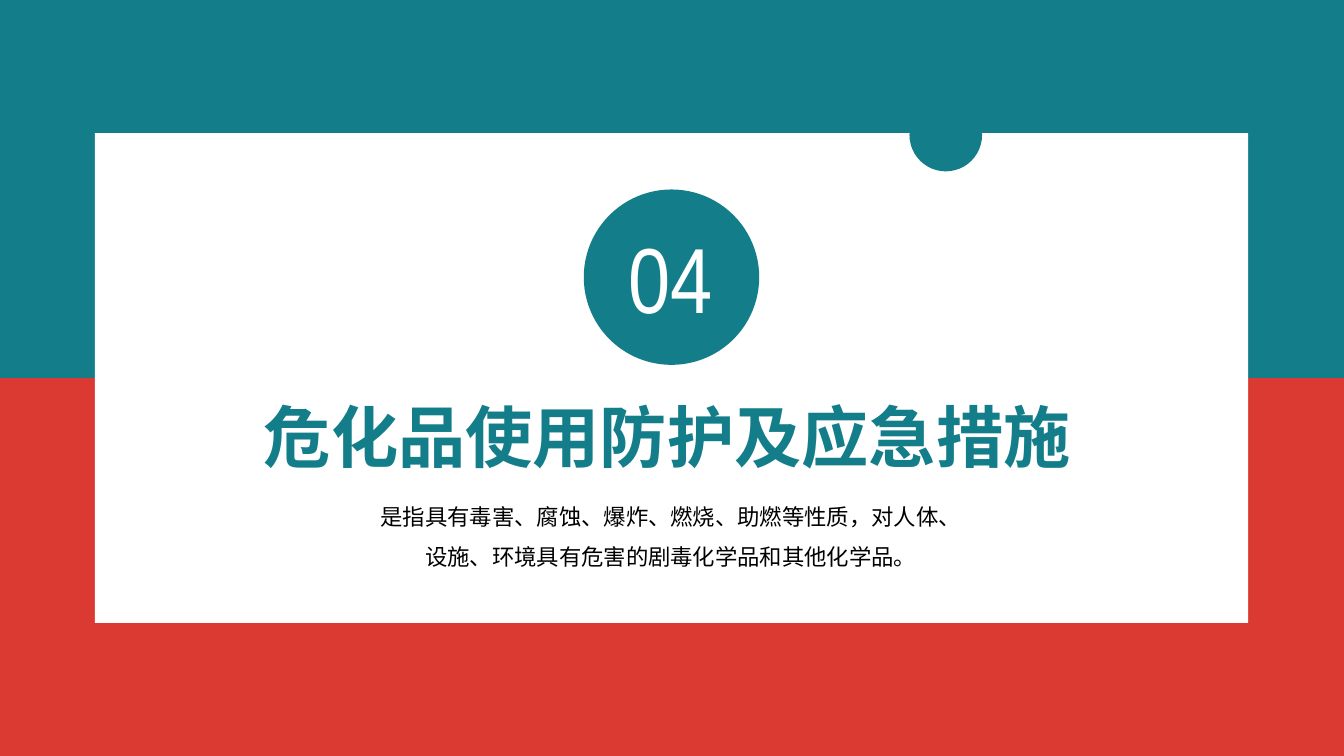
from dataclasses import dataclass

from pptx import Presentation
from pptx.dml.color import RGBColor
from pptx.enum.shapes import MSO_SHAPE
from pptx.enum.text import PP_ALIGN
from pptx.slide import Slide
from pptx.util import Inches, Pt

TEAL = RGBColor(0x13, 0x7E, 0x89)
RED = RGBColor(0xDB, 0x3A, 0x33)
WHITE = RGBColor(0xFF, 0xFF, 0xFF)
BLACK = RGBColor(0x00, 0x00, 0x00)
RECTANGLE = MSO_SHAPE.RECTANGLE
OVAL = MSO_SHAPE.OVAL
LEFT = PP_ALIGN.LEFT
CENTER = PP_ALIGN.CENTER

SLIDE_WIDTH = 13.33
SLIDE_HEIGHT = 7.5
HALF_HEIGHT = SLIDE_HEIGHT / 2


@dataclass
class Panel:
    kind: MSO_SHAPE
    left: float
    top: float
    width: float
    height: float
    color: RGBColor


@dataclass
class Label:
    text: str
    left: float
    top: float
    width: float
    height: float
    size: int
    color: RGBColor
    font: str = "Arial"
    bold: bool = False
    alignment: PP_ALIGN = CENTER
    line_spacing: float = 1.0


PANELS = [
    Panel(RECTANGLE, 0, HALF_HEIGHT, SLIDE_WIDTH, HALF_HEIGHT, RED),
    Panel(RECTANGLE, 0, 0, SLIDE_WIDTH, HALF_HEIGHT, TEAL),
    Panel(RECTANGLE, 0.94, 1.32, 11.44, 4.86, WHITE),
    Panel(OVAL, 9.02, 0.98, 0.72, 0.72, TEAL),
    Panel(OVAL, 5.79, 1.88, 1.74, 1.74, TEAL),
]

LABELS = [
    Label("04", 6.01, 2.14, 1.28, 1.21, 66, WHITE, font="Arial Narrow"),
    Label("危化品使用防护及应急措施", 2.52, 3.87, 8.26, 0.91, 48, TEAL,
          bold=True, alignment=LEFT),
    Label("是指具有毒害、腐蚀、爆炸、燃烧、助燃等性质，对人体、设施、环境具有危害的剧毒化学品和其他化学品。",
          3.61, 4.81, 6.09, 0.86, 16, BLACK, line_spacing=1.5),
]


def add_panel(slide: Slide, panel: Panel) -> None:
    shape = slide.shapes.add_shape(
        panel.kind, Inches(panel.left), Inches(panel.top),
        Inches(panel.width), Inches(panel.height))
    shape.shadow.inherit = False
    shape.fill.solid()
    shape.fill.fore_color.rgb = panel.color
    shape.line.fill.background()


def add_label(slide: Slide, label: Label) -> None:
    text_box = slide.shapes.add_textbox(
        Inches(label.left), Inches(label.top),
        Inches(label.width), Inches(label.height))
    text_frame = text_box.text_frame
    text_frame.word_wrap = True
    paragraph = text_frame.paragraphs[0]
    paragraph.text = label.text
    paragraph.alignment = label.alignment
    paragraph.line_spacing = label.line_spacing
    paragraph.font.name = label.font
    paragraph.font.size = Pt(label.size)
    paragraph.font.bold = label.bold
    paragraph.font.color.rgb = label.color


def main() -> None:
    presentation = Presentation()
    presentation.slide_width = Inches(SLIDE_WIDTH)
    presentation.slide_height = Inches(SLIDE_HEIGHT)
    slide = presentation.slides.add_slide(presentation.slide_layouts[6])
    for panel in PANELS:
        add_panel(slide, panel)
    for label in LABELS:
        add_label(slide, label)
    presentation.save("out.pptx")


if __name__ == "__main__":
    main()
